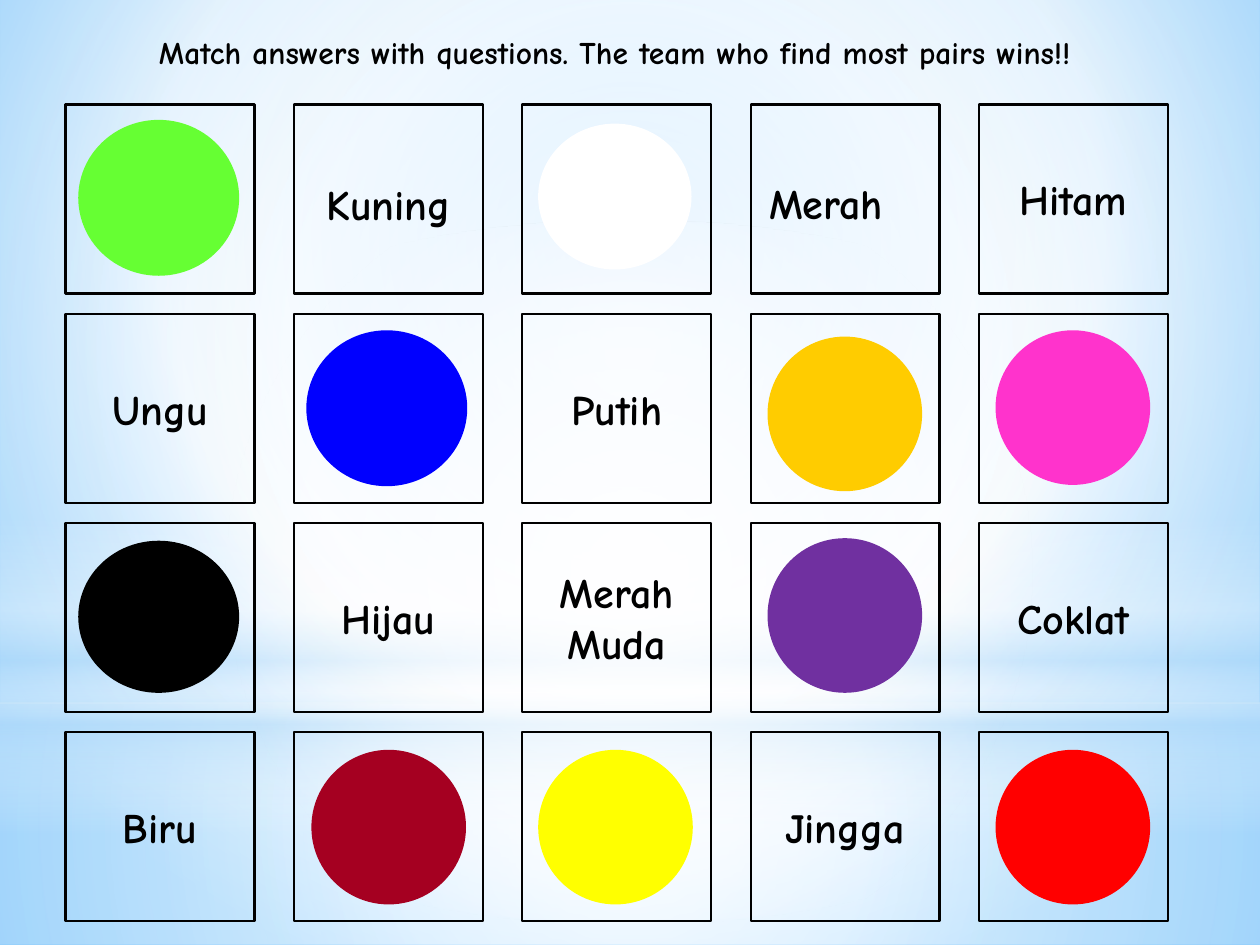
from dataclasses import dataclass
from typing import Optional

import pptx
import pptx.dml.color
import pptx.enum.shapes
import pptx.enum.text
import pptx.oxml
import pptx.oxml.ns
import pptx.util
from pptx.util import Inches

Shapes = pptx.enum.shapes.MSO_SHAPE
Align = pptx.enum.text.PP_ALIGN
Anchor = pptx.enum.text.MSO_ANCHOR
AutoSize = pptx.enum.text.MSO_AUTO_SIZE


@dataclass(frozen=True)
class Theme:
    font: str = "Comic Neue"
    ink: str = "000000"
    white: str = "FFFFFF"
    mist: str = "B4DCFA"
    sky: str = "9ED5FF"
    deep_sky: str = "5BB9FF"
    instruction_size: int = 18
    word_size: int = 24
    outline: float = 1.25


@dataclass(frozen=True)
class Stop:
    position: int
    color: str
    alpha: int = 100


@dataclass(frozen=True)
class Gradient:
    stops: tuple[Stop, ...]
    focus: Optional[tuple[int, int, int, int]] = (50, 50, 50, 50)


@dataclass(frozen=True)
class Box:
    left: float
    top: float
    width: float
    height: float

    def lengths(self) -> tuple:
        return tuple(Inches(v) for v in (self.left, self.top, self.width, self.height))


@dataclass(frozen=True)
class Glow:
    preset: Shapes
    box: Box
    gradient: Gradient


@dataclass(frozen=True)
class Disc:
    color: str
    box: Box


@dataclass(frozen=True)
class Label:
    word: str
    box: Box


THEME = Theme()
WHITE, MIST = THEME.white, THEME.mist
SLIDE = Box(0, 0, 10, 7.5)
CARD_SIZE = 1.5
FIRST_LEFT, LAST_LEFT = 0.52, 7.77
FIRST_TOP, ROW_PITCH = 0.83, 1.66

SKY = Gradient(
    (Stop(0, THEME.sky), Stop(60, WHITE), Stop(100, THEME.deep_sky)), (20, 10, 20, 60)
)
GLOWS = (
    Glow(Shapes.RECTANGLE, Box(0, 5.58, 10, 1.92),
         Gradient((Stop(0, WHITE, 91), Stop(37, WHITE, 76), Stop(100, MIST, 79)))),
    Glow(Shapes.RECTANGLE, Box(0, 0, 10, 5.58),
         Gradient((Stop(0, WHITE, 89), Stop(48, WHITE, 62), Stop(100, MIST, 79)))),
    Glow(Shapes.RECTANGLE, Box(0, 4.12, 10, 2.5),
         Gradient((Stop(0, WHITE, 0), Stop(29, WHITE, 30), Stop(45, MIST, 40),
                   Stop(55, WHITE, 26), Stop(65, MIST, 60), Stop(100, WHITE, 0)), None)),
    Glow(Shapes.OVAL, Box(0, 1.75, 10, 5.58),
         Gradient((Stop(0, WHITE), Stop(56, WHITE, 0)))),
)
INSTRUCTION = Label(
    "Match answers with questions. The team who find most pairs wins!!",
    Box(0.51, 0.21, 8.74, 0.4),
)
CARD_WORDS = (
    ("", "", "", "", "Hitam"),
    ("Ungu", "", "Putih", "", ""),
    ("", "Hijau", "Merah Muda", "", "Coklat"),
    ("Biru", "", "", "Jingga", ""),
)
LOOSE_WORDS = (
    Label("Kuning", Box(2.48, 1.37, 1.21, 0.5)),
    Label("Merah", Box(5.94, 1.36, 1.23, 0.5)),
)
DISCS = (
    Disc("66FF33", Box(0.63, 0.96, 1.26, 1.22)),
    Disc("FFFFFF", Box(4.28, 0.99, 1.2, 1.14)),
    Disc("0000FF", Box(2.44, 2.63, 1.26, 1.22)),
    Disc("FFCC00", Box(6.1, 2.68, 1.21, 1.21)),
    Disc("FF33CC", Box(7.91, 2.63, 1.21, 1.21)),
    Disc("000000", Box(0.63, 4.3, 1.26, 1.19)),
    Disc("7030A0", Box(6.1, 4.28, 1.21, 1.21)),
    Disc("A50021", Box(2.48, 5.96, 1.21, 1.21)),
    Disc("FFFF00", Box(4.28, 5.96, 1.21, 1.21)),
    Disc("FF0000", Box(7.91, 5.96, 1.21, 1.21)),
)


def rgb(color: str) -> pptx.dml.color.RGBColor:
    return pptx.dml.color.RGBColor.from_string(color)


def apply_gradient(owner, fill, gradient: Gradient) -> None:
    fill.gradient()
    stops = "".join(
        f'<a:gs pos="{s.position * 1000}"><a:srgbClr val="{s.color}">'
        f'<a:alpha val="{s.alpha * 1000}"/></a:srgbClr></a:gs>'
        for s in gradient.stops
    )
    if gradient.focus is None:
        direction = '<a:lin ang="5400000" scaled="0"/>'
    else:
        left, top, right, bottom = (v * 1000 for v in gradient.focus)
        direction = (f'<a:path path="circle"><a:fillToRect l="{left}" t="{top}" '
                     f'r="{right}" b="{bottom}"/></a:path>')
    replacement = pptx.oxml.parse_xml(
        f'<a:gradFill {pptx.oxml.ns.nsdecls("a")} rotWithShape="1">'
        f"<a:gsLst>{stops}</a:gsLst>{direction}</a:gradFill>"
    )
    current = owner.find(".//" + pptx.oxml.ns.qn("a:gradFill"))
    current.getparent().replace(current, replacement)


def write_text(frame, text: str, size: int) -> None:
    frame.text = text
    paragraph = frame.paragraphs[0]
    paragraph.alignment = Align.CENTER
    paragraph.font.name = THEME.font
    paragraph.font.size = pptx.util.Pt(size)
    paragraph.font.bold = True
    paragraph.font.color.rgb = rgb(THEME.ink)


def draw_glow(slide, glow: Glow) -> None:
    panel = slide.shapes.add_shape(glow.preset, *glow.box.lengths())
    panel.shadow.inherit = False
    panel.line.fill.background()
    apply_gradient(panel.element, panel.fill, glow.gradient)


def draw_outlined(slide, preset: Shapes, box: Box, line_color: str):
    outlined = slide.shapes.add_shape(preset, *box.lengths())
    outlined.shadow.inherit = False
    outlined.line.color.rgb = rgb(line_color)
    outlined.line.width = pptx.util.Pt(THEME.outline)
    return outlined


def draw_card(slide, row: int, column: int, word: str) -> None:
    pitch = (LAST_LEFT - FIRST_LEFT) / (len(CARD_WORDS[0]) - 1)
    box = Box(FIRST_LEFT + column * pitch, FIRST_TOP + row * ROW_PITCH, CARD_SIZE, CARD_SIZE)
    card = draw_outlined(slide, Shapes.RECTANGLE, box, THEME.ink)
    card.fill.background()
    if word:
        card.text_frame.vertical_anchor = Anchor.MIDDLE
        write_text(card.text_frame, word, THEME.word_size)


def draw_disc(slide, disc: Disc) -> None:
    circle = draw_outlined(slide, Shapes.OVAL, disc.box, disc.color)
    circle.fill.solid()
    circle.fill.fore_color.rgb = rgb(disc.color)


def draw_loose_word(slide, label: Label) -> None:
    frame = slide.shapes.add_textbox(*label.box.lengths()).text_frame
    frame.word_wrap = False
    frame.auto_size = AutoSize.SHAPE_TO_FIT_TEXT
    write_text(frame, label.word, THEME.word_size)


def place_instruction(slide) -> None:
    title = slide.shapes.title
    title.left, title.top, title.width, title.height = INSTRUCTION.box.lengths()
    title.text_frame.auto_size = AutoSize.SHAPE_TO_FIT_TEXT
    title.text_frame.vertical_anchor = Anchor.TOP
    write_text(title.text_frame, INSTRUCTION.word, THEME.instruction_size)
    title.element.getparent().append(title.element)


def main() -> None:
    deck = pptx.Presentation()
    deck.slide_width, deck.slide_height = SLIDE.lengths()[2:]
    slide = deck.slides.add_slide(deck.slide_layouts.get_by_name("Title Only"))
    apply_gradient(slide.element, slide.background.fill, SKY)
    for glow in GLOWS:
        draw_glow(slide, glow)
    for row, words in enumerate(CARD_WORDS):
        for column, word in enumerate(words):
            draw_card(slide, row, column, word)
    place_instruction(slide)
    for label in LOOSE_WORDS:
        draw_loose_word(slide, label)
    for disc in DISCS:
        draw_disc(slide, disc)
    deck.save("out.pptx")


if __name__ == "__main__":
    main()
